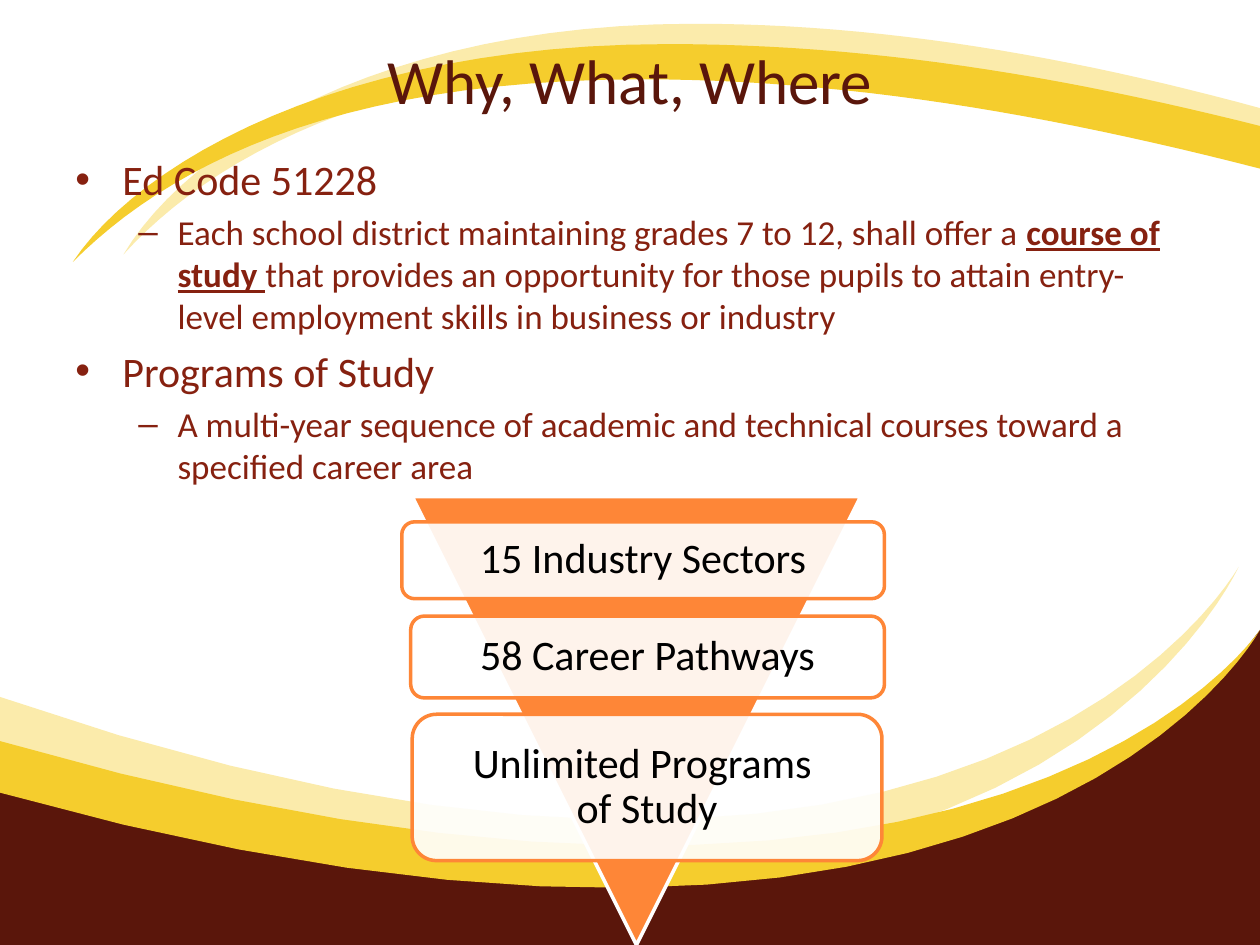
from dataclasses import dataclass

from lxml.etree import SubElement
from pptx import Presentation
from pptx.dml.color import RGBColor
from pptx.enum.shapes import MSO_SHAPE
from pptx.enum.text import MSO_ANCHOR, PP_ALIGN
from pptx.oxml.ns import qn
from pptx.util import Cm, Pt

MAROON, RUST, GOLD, CREAM = "5A160B", "862110", "F5CD2D", "FBEBAB"
ORANGE, WHITE, BLACK = "FE8637", "FFFFFF", "000000"
FONT = "Calibri"
STEPS = 24

Point = tuple[float, float]


@dataclass
class Swoosh:
    """An outline in cm: each leg holds three points for a curve, one for a line."""
    color: str
    start: Point
    legs: list[tuple[Point, ...]]


@dataclass
class Level:
    mark: str
    size: int
    left: float
    hang: float


@dataclass
class Item:
    level: Level
    words: list[tuple[str, bool]]


@dataclass
class Card:
    text: str
    left: float
    top: float
    width: float
    height: float


SWOOSHES = [
    Swoosh(CREAM, (25.4, 3.12), [
        ((21.34, 2.01), (17.27, 1.24), (13.59, 1.24)),
        ((7.62, 1.24), (4.19, 3.25), (2.49, 5.13)),
        ((3.81, 2.92), (7.75, 0.48), (14, 0.48)),
        ((17.78, 0.48), (21.59, 1.14), (25.4, 2.18))]),
    Swoosh(GOLD, (25.4, 3.4), [
        ((21.08, 2.29), (17.02, 1.6), (12.95, 1.6)),
        ((6.6, 1.6), (3.3, 3.45), (1.47, 5.28)),
        ((2.79, 3.3), (6.86, 0.89), (13.46, 0.89)),
        ((17.53, 0.89), (21.34, 1.52), (25.4, 2.54))]),
    Swoosh(MAROON, (0, 15.82), [
        ((2.41, 16.46), (6.27, 17.58), (11.07, 17.6)),
        ((21.64, 17.78), (24.41, 14.02), (25.4, 12.7)),
        ((25.4, 19.05),), ((0, 19.05),)]),
    Swoosh(CREAM, (0, 14.05), [
        ((19.71, 20.88), (24.97, 11.43), (24.97, 11.43)),
        ((24.97, 11.43), (20.22, 22.02), (0, 15.27))]),
    Swoosh(GOLD, (0, 14.94), [
        ((20.07, 20.75), (25.4, 12.7), (25.4, 12.7)),
        ((25.4, 12.7), (20.55, 21.74), (0, 15.98))]),
]

MAIN = Level("•", 24, 0.95, 0.95)
SUB = Level("–", 20, 2.06, 0.79)
ITEMS = [
    Item(MAIN, [("Ed Code 51228", False)]),
    Item(SUB, [
        ("Each school district maintaining grades 7 to 12, shall offer a ", False),
        ("course of study ", True),
        ("that provides an opportunity for those pupils to attain entry-level "
         "employment skills in business or industry", False)]),
    Item(MAIN, [("Programs of Study", False)]),
    Item(SUB, [("A multi-year sequence of academic and technical courses "
                "toward a specified career area", False)]),
]

CARDS = [
    Card("15 Industry Sectors", 8.1, 10.52, 9.73, 1.55),
    Card("58 Career Pathways", 8.28, 12.42, 9.55, 1.65),
    Card("Unlimited Programs \vof Study", 8.31, 14.4, 9.47, 2.95),
]


def paint(target, color: str) -> None:
    """Colour a fill or a font."""
    if hasattr(target, "solid"):
        target.solid()
        target.fore_color.rgb = RGBColor.from_string(color)
    else:
        target.color.rgb = RGBColor.from_string(color)


def style(run, size: int, color: str) -> None:
    run.font.name = FONT
    run.font.size = Pt(size)
    paint(run.font, color)


def trace(start: Point, leg: tuple[Point, ...]) -> list[Point]:
    """Return the points along a cubic curve, or the end of a line."""
    if len(leg) == 1:
        return list(leg)
    spots = []
    for step in range(1, STEPS + 1):
        t = step / STEPS
        shares = ((1 - t) ** 3, 3 * t * (1 - t) ** 2, 3 * t * t * (1 - t), t ** 3)
        spots.append(tuple(sum(share * spot[axis]
                               for share, spot in zip(shares, (start, *leg)))
                           for axis in (0, 1)))
    return spots


def draw_swoosh(slide, swoosh: Swoosh) -> None:
    spots, last = [], swoosh.start
    for leg in swoosh.legs:
        spots += trace(last, leg)
        last = leg[-1]
    x, y = swoosh.start
    pen = slide.shapes.build_freeform(Cm(x), Cm(y))
    pen.add_line_segments([(Cm(x), Cm(y)) for x, y in spots])
    shape = pen.convert_to_shape()
    shape.shadow.inherit = False
    paint(shape.fill, swoosh.color)
    shape.line.fill.background()


def draw_title(slide, text: str) -> None:
    frame = slide.shapes.add_textbox(Cm(1.27), Cm(0), Cm(22.86), Cm(3.18)).text_frame
    frame.word_wrap = True
    frame.vertical_anchor = MSO_ANCHOR.MIDDLE
    frame.text = text
    line = frame.paragraphs[0]
    line.alignment = PP_ALIGN.CENTER
    style(line.runs[0], 36, MAROON)


def draw_list(slide, items: list[Item]) -> None:
    frame = slide.shapes.add_textbox(Cm(1.27), Cm(2.97), Cm(22.86), Cm(8.05)).text_frame
    frame.word_wrap = True
    for index, item in enumerate(items):
        line = frame.add_paragraph() if index else frame.paragraphs[0]
        level = item.level
        line.space_before = Pt(level.size * 0.2)
        props = line._p.get_or_add_pPr()
        props.set("marL", str(Cm(level.left)))
        props.set("indent", str(-Cm(level.hang)))
        SubElement(props, qn("a:buFont")).set("typeface", "Arial")
        SubElement(props, qn("a:buChar")).set("char", level.mark)
        for text, strong in item.words:
            run = line.add_run()
            run.text = text
            style(run, level.size, RUST)
            if strong:
                run.font.bold = run.font.underline = True


def draw_shape(slide, kind: MSO_SHAPE, box: tuple[float, ...], fill: str, edge: str):
    shape = slide.shapes.add_shape(kind, *map(Cm, box))
    shape.shadow.inherit = False
    paint(shape.fill, fill)
    paint(shape.line.fill, edge)
    shape.line.width = Pt(2)
    return shape


def draw_card(slide, card: Card) -> None:
    box = (card.left, card.top, card.width, card.height)
    shape = draw_shape(slide, MSO_SHAPE.ROUNDED_RECTANGLE, box, WHITE, ORANGE)
    tint = shape._element.spPr.find(qn("a:solidFill")).find(qn("a:srgbClr"))
    SubElement(tint, qn("a:alpha")).set("val", "90000")
    frame = shape.text_frame
    frame.word_wrap = True
    frame.vertical_anchor = MSO_ANCHOR.MIDDLE
    line = frame.paragraphs[0]
    line.text = card.text
    line.alignment = PP_ALIGN.CENTER
    line.line_spacing = 0.9
    for run in line.runs:
        style(run, 24, BLACK)


def main() -> None:
    deck = Presentation()
    deck.slide_width, deck.slide_height = Cm(25.4), Cm(19.05)
    slide = deck.slides.add_slide(deck.slide_layouts[6])
    for swoosh in SWOOSHES:
        draw_swoosh(slide, swoosh)
    draw_title(slide, "Why, What, Where")
    draw_list(slide, ITEMS)
    funnel = draw_shape(slide, MSO_SHAPE.ISOSCELES_TRIANGLE,
                        (8.31, 10.01, 9.04, 9.04), ORANGE, WHITE)
    funnel.rotation = 180
    for card in CARDS:
        draw_card(slide, card)
    deck.save("out.pptx")


if __name__ == "__main__":
    main()
